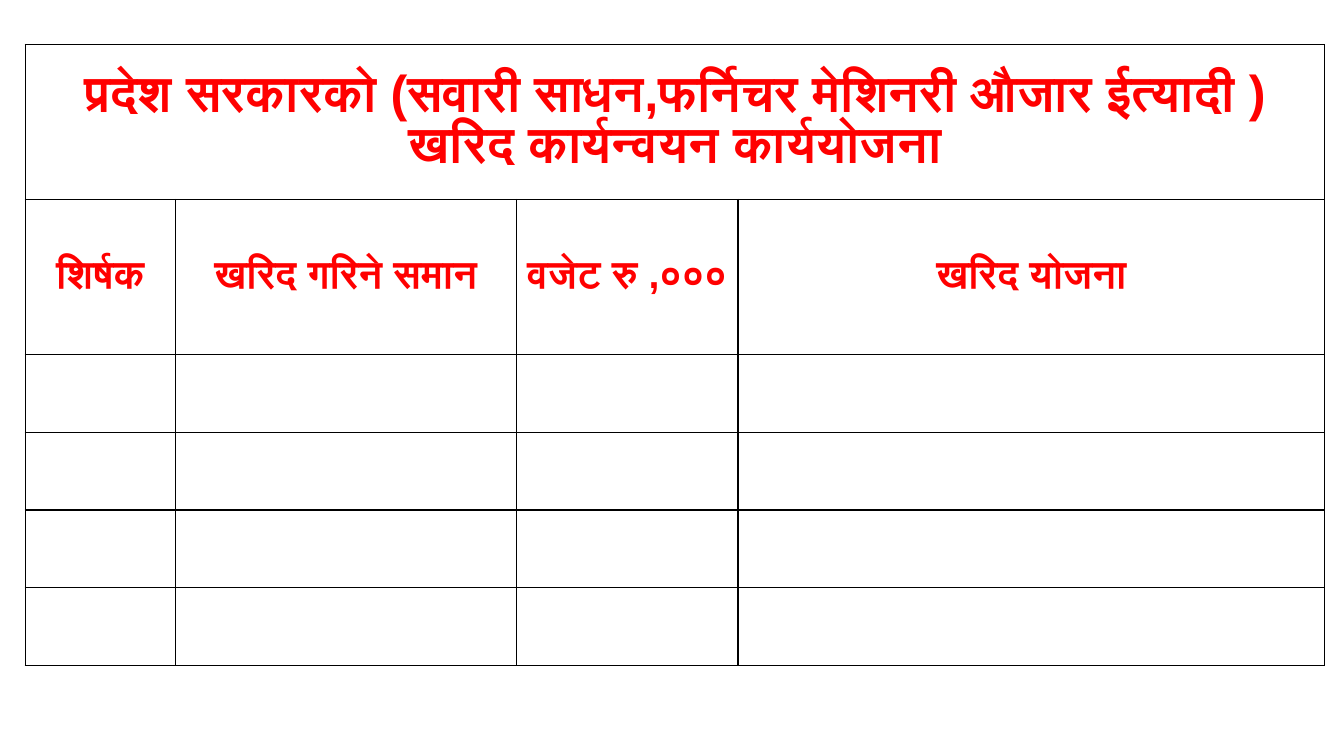
"""Build a procurement action plan slide with a bordered table."""
from dataclasses import dataclass

from lxml import etree
from pptx import Presentation
from pptx import util as u
from pptx.dml.color import RGBColor
from pptx.enum import text
from pptx.oxml import ns
from pptx.table import Table, _Cell


@dataclass(frozen=True)
class Column:
    heading: str
    width: float


PLAN_TITLE = "प्रदेश सरकारको (सवारी साधन,फर्निचर मेशिनरी औजार ईत्यादी ) खरिद कार्यन्वयन कार्ययोजना"
COLUMNS = [
    Column("शिर्षक", 1.49),
    Column("खरिद गरिने समान", 3.38),
    Column("वजेट रु ,०००", 2.2),
    Column("खरिद योजना", 5.82),
]
ROW_HEIGHTS = [1.54] * 2 + [0.77] * 4
FONT = "Arial"
RED = "FF0000"
BLACK = "000000"


def color(value: str) -> RGBColor:
    return RGBColor.from_string(value)


def add_borders(cell: _Cell) -> None:
    properties = cell._tc.get_or_add_tcPr()
    for position, side in enumerate(("lnL", "lnR", "lnT", "lnB")):
        border = etree.Element(ns.qn(f"a:{side}"), w=str(u.Pt(1)))
        fill = etree.SubElement(border, ns.qn("a:solidFill"))
        etree.SubElement(fill, ns.qn("a:srgbClr"), val=BLACK)
        properties.insert(position, border)


def write_heading(cell: _Cell, wording: str, size: int) -> None:
    cell.text_frame.text = wording
    paragraph = cell.text_frame.paragraphs[0]
    paragraph.alignment = text.PP_ALIGN.CENTER
    paragraph.line_spacing = 0.9
    run = paragraph.runs[0]
    run.font.size = u.Pt(size)
    run.font.bold = True
    run.font.name = FONT
    run.font.color.rgb = color(RED)
    etree.SubElement(run.font._element, ns.qn("a:cs"), typeface=FONT)


def format_grid(plan: Table) -> None:
    plan.first_row = plan.horz_banding = False
    for column, grid_column in zip(COLUMNS, plan.columns):
        grid_column.width = u.Inches(column.width)
    for height, row in zip(ROW_HEIGHTS, plan.rows):
        row.height = u.Inches(height)
    for cell in plan.iter_cells():
        cell.vertical_anchor = text.MSO_ANCHOR.MIDDLE
        cell.margin_left = cell.margin_right = u.Inches(0.07)
        cell.fill.background()
        add_borders(cell)


def main() -> None:
    deck = Presentation()
    deck.slide_width, deck.slide_height = u.Inches(13.33), u.Inches(7.5)
    slide = deck.slides.add_slide(deck.slide_layouts[6])
    plan = slide.shapes.add_table(
        len(ROW_HEIGHTS), len(COLUMNS), u.Inches(0.25), u.Inches(0.44),
        u.Inches(sum(column.width for column in COLUMNS)), u.Inches(sum(ROW_HEIGHTS)),
    ).table
    format_grid(plan)
    plan.cell(0, 0).merge(plan.cell(0, len(COLUMNS) - 1))
    write_heading(plan.cell(0, 0), PLAN_TITLE, 36)
    for index, column in enumerate(COLUMNS):
        write_heading(plan.cell(1, index), column.heading, 28)
    deck.save("out.pptx")


if __name__ == "__main__":
    main()
